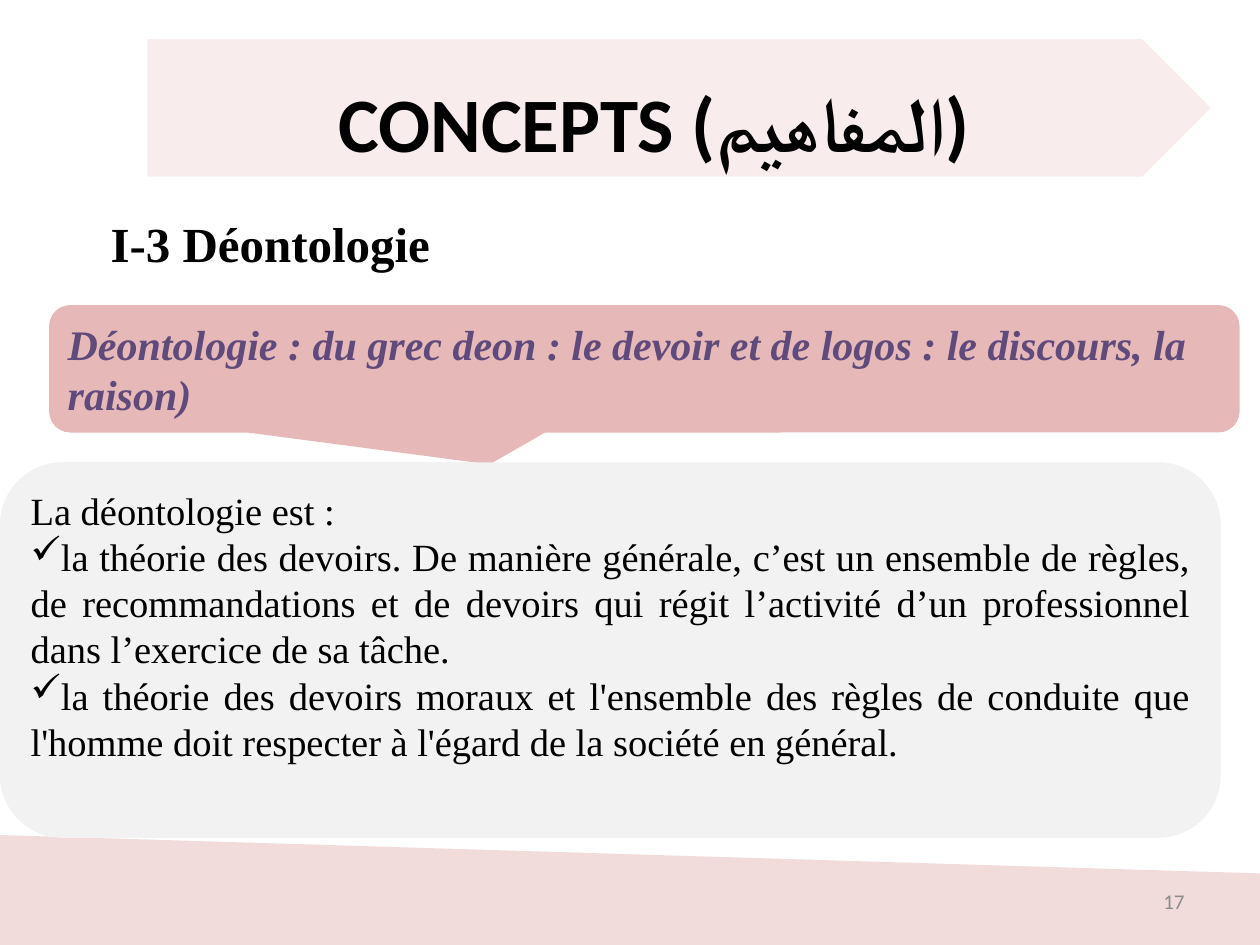
from lxml.etree import SubElement
from pptx import Presentation
from pptx.dml.color import RGBColor
from pptx.enum.shapes import MSO_SHAPE as Shape
from pptx.enum.text import MSO_ANCHOR as Anchor, PP_ALIGN as Align
from pptx.oxml.ns import qn
from pptx.util import Cm, Pt

COLORS = {
    "band": "F2DCDB",
    "banner": "F8EDEC",
    "callout": "E6B9B8",
    "box": "F2F2F2",
    "text": "000000",
    "accent": "604A7B",
    "number": "8C8C8C",
}
SERIF, SANS = "Times New Roman", "Calibri"


def color(name):
    return RGBColor.from_string(COLORS[name])


def write(shape, lines, font_name, size, color_name, align=Align.LEFT,
          anchor=Anchor.TOP, bold=False, italic=False):
    """Fill the shape with one paragraph per line, all in one style."""
    frame = shape.text_frame
    frame.word_wrap = True
    frame.vertical_anchor = anchor
    frame.text = "\n".join(lines)
    for paragraph in frame.paragraphs:
        paragraph.alignment = align
        font = paragraph.runs[0].font
        font.name, font.size = font_name, Pt(size)
        font.bold, font.italic = bold, italic
        font.color.rgb = color(color_name)


presentation = Presentation()
presentation.slide_width, presentation.slide_height = Cm(25.4), Cm(19.05)
slide = presentation.slides.add_slide(presentation.slide_layouts[6])
shapes = slide.shapes

# Sloping band along the bottom
builder = shapes.build_freeform(Cm(0), Cm(16.87))
corners = [(25.6, 17.65), (25.45, 18.87), (25.4, 19.05), (0, 19.05)]
builder.add_line_segments([(Cm(x), Cm(y)) for x, y in corners], close=True)
band = builder.convert_to_shape()
band.shadow.inherit = False
band.fill.solid()
band.fill.fore_color.rgb = color("band")
band.line.color.rgb = color("band")
band.line.width = Pt(2)

# Filled shapes
panels = {}
for name, kind, left, top, width, height in [
    ("banner", Shape.PENTAGON, 2.97, 0.79, 21.44, 2.77),
    ("callout", Shape.ROUNDED_RECTANGULAR_CALLOUT, 0.99, 6.15, 24, 2.57),
    ("box", Shape.ROUNDED_RECTANGLE, 0, 9.32, 24.61, 7.57),
]:
    panel = shapes.add_shape(kind, Cm(left), Cm(top), Cm(width), Cm(height))
    panel.shadow.inherit = False
    panel.fill.solid()
    panel.fill.fore_color.rgb = color(name)
    panel.line.fill.background()
    panels[name] = panel

callout = panels["callout"]
callout.adjustments[0] = -0.13
callout.adjustments[1] = 0.75
write(callout, ["Déontologie : du grec deon : le devoir et de logos : le discours, la raison)"],
      SERIF, 24, "accent", anchor=Anchor.MIDDLE, bold=True, italic=True)

# Definitions, check-marked after the opening line
box = panels["box"]
write(box, [
    "La déontologie est :",
    "la théorie des devoirs. De manière générale, c’est un ensemble de règles, "
    "de recommandations et de devoirs qui régit l’activité d’un professionnel "
    "dans l’exercice de sa tâche.",
    "la théorie des devoirs moraux et l'ensemble des règles de conduite que "
    "l'homme doit respecter à l'égard de la société en général.",
], SERIF, 22, "text", align=Align.JUSTIFY)
for paragraph in box.text_frame.paragraphs[1:]:
    properties = paragraph._p.get_or_add_pPr()
    SubElement(properties, qn("a:buChar")).set("char", "✓")

# Title, heading and slide number
title = shapes.add_textbox(Cm(1.78), Cm(1.4), Cm(22.81), Cm(2.13))
write(title, ["CONCEPTS (المفاهيم)"], SANS, 44, "text", align=Align.CENTER, bold=True)

heading = shapes.add_textbox(Cm(1.98), Cm(4.17), Cm(15.29), Cm(1.45))
write(heading, ["I-3 Déontologie"], SERIF, 28, "text", bold=True)

number = shapes.add_textbox(Cm(18.21), Cm(17.65), Cm(5.92), Cm(1.02))
write(number, ["17"], SANS, 12, "number", align=Align.RIGHT, anchor=Anchor.MIDDLE)

presentation.save("out.pptx")
